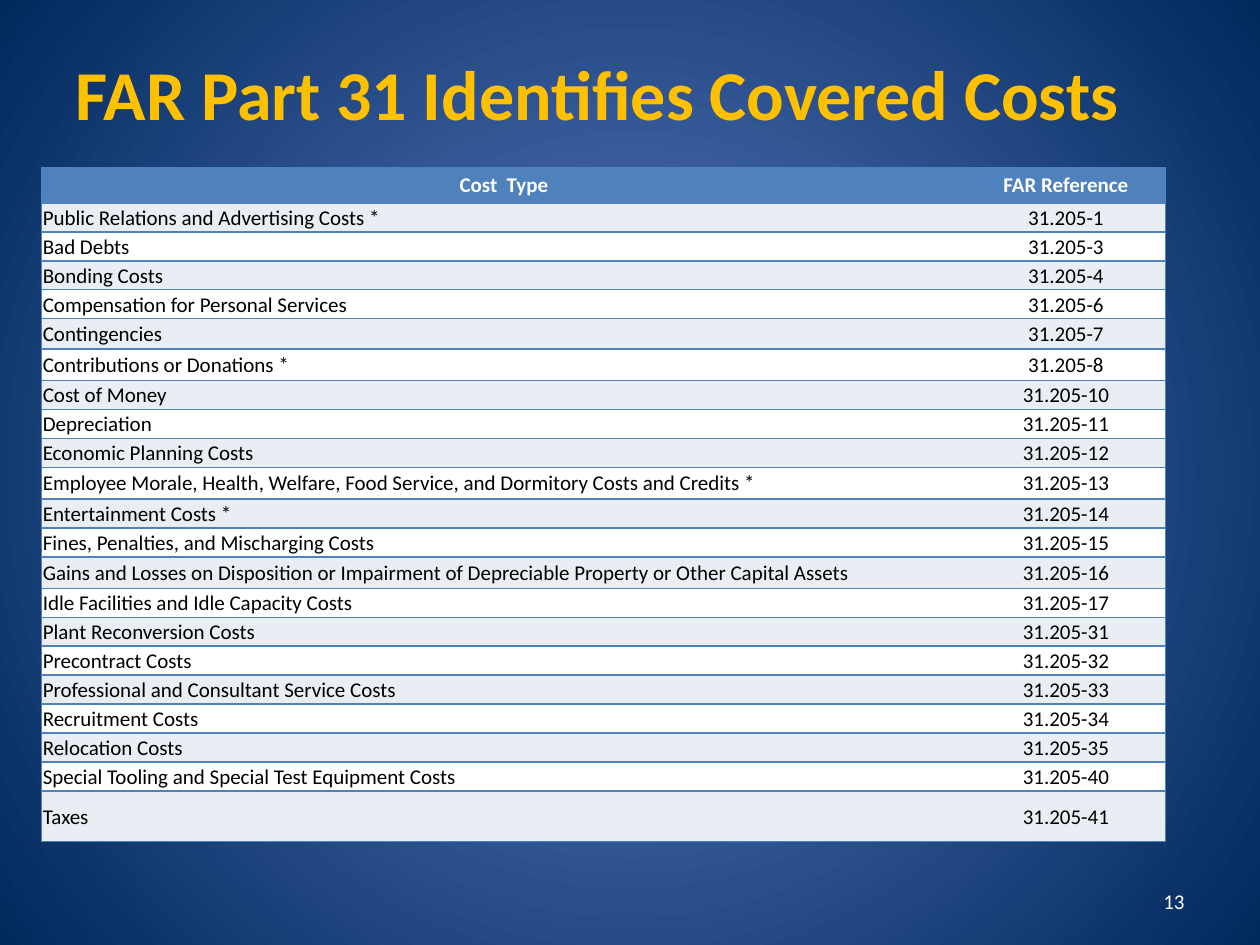
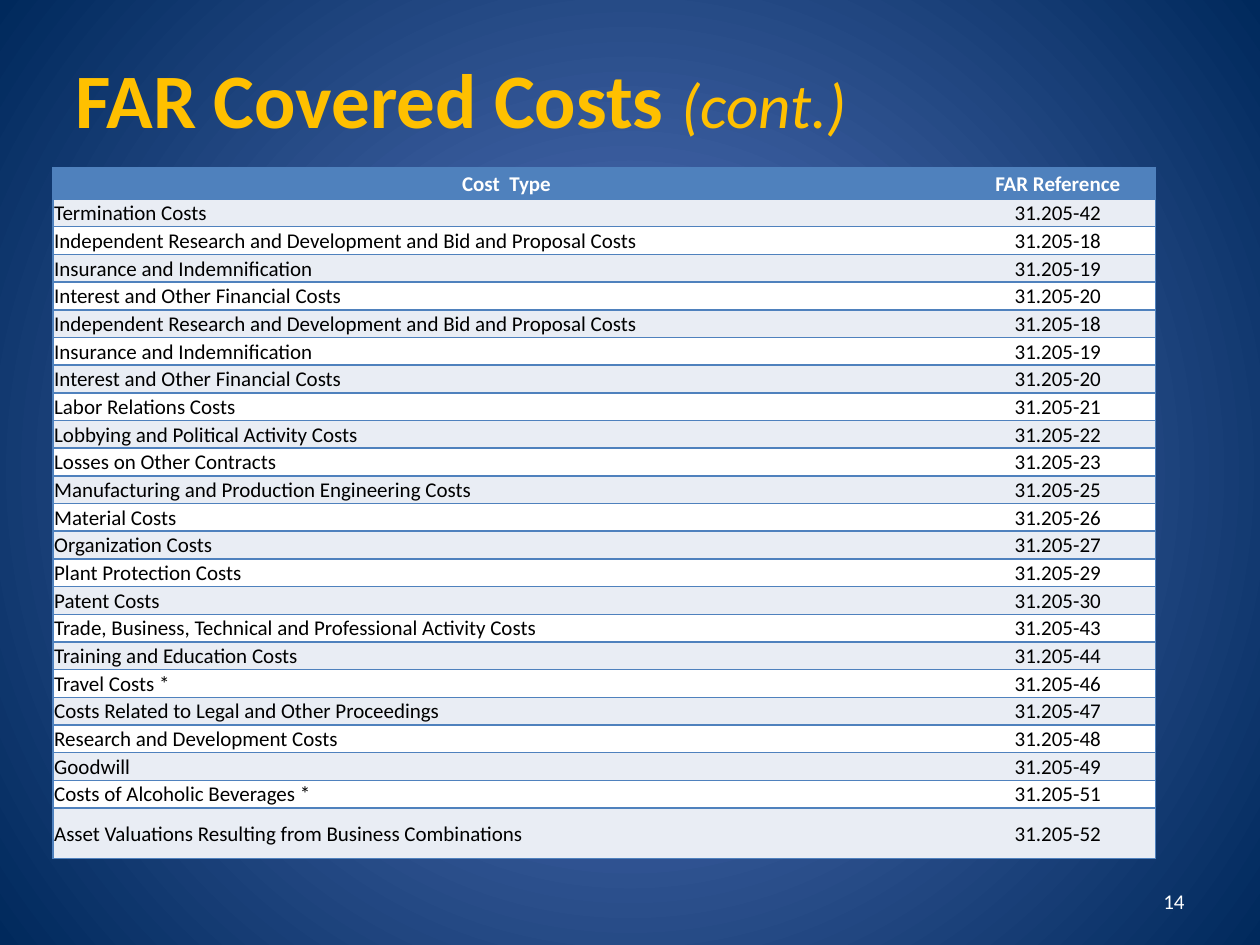
from lxml import etree
from pptx import Presentation
from pptx.dml.color import RGBColor
from pptx.enum.text import MSO_ANCHOR, MSO_AUTO_SIZE, PP_ALIGN
from pptx.oxml import parse_xml
from pptx.oxml.ns import nsdecls, qn
from pptx.util import Inches, Pt

MIDDLE = MSO_ANCHOR.MIDDLE
NO_AUTOFIT = MSO_AUTO_SIZE.NONE
LEFT, CENTER, RIGHT = PP_ALIGN.LEFT, PP_ALIGN.CENTER, PP_ALIGN.RIGHT

FONT = "Calibri"
COLORS = {
    "glow": "5E7CC5",
    "navy": "00295C",
    "gold": "FFC000",
    "white": "FFFFFF",
    "black": "000000",
    "header": "4F81BD",
    "band": "E9EDF4",
}
TITLE_ONLY = 5
PLAIN_TABLE_STYLE = "{2D5ABB26-0587-4C30-8999-92F81FD0307C}"
PAGE_NUMBER_BOX = (7.17, 6.95, 2.33, 0.4)
HEADINGS = ("Cost  Type", "FAR Reference")

COVERED_COSTS = [
    ("Public Relations and Advertising Costs *", 1),
    ("Bad Debts", 3),
    ("Bonding Costs", 4),
    ("Compensation for Personal Services", 6),
    ("Contingencies", 7),
    ("Contributions or Donations *", 8),
    ("Cost of Money", 10),
    ("Depreciation", 11),
    ("Economic Planning Costs", 12),
    ("Employee Morale, Health, Welfare, Food Service, and Dormitory Costs and Credits *", 13),
    ("Entertainment Costs *", 14),
    ("Fines, Penalties, and Mischarging Costs", 15),
    ("Gains and Losses on Disposition or Impairment of Depreciable Property or Other Capital Assets", 16),
    ("Idle Facilities and Idle Capacity Costs", 17),
    ("Plant Reconversion Costs", 31),
    ("Precontract Costs", 32),
    ("Professional and Consultant Service Costs", 33),
    ("Recruitment Costs", 34),
    ("Relocation Costs", 35),
    ("Special Tooling and Special Test Equipment Costs", 40),
    ("Taxes", 41),
]
RESEARCH_AND_FINANCE = [
    ("Independent Research and Development and Bid and Proposal Costs", 18),
    ("Insurance and Indemnification", 19),
    ("Interest and Other Financial Costs", 20),
]
MORE_COVERED_COSTS = [
    ("Termination Costs", 42),
    *RESEARCH_AND_FINANCE,
    *RESEARCH_AND_FINANCE,
    ("Labor Relations Costs", 21),
    ("Lobbying and Political Activity Costs", 22),
    ("Losses on Other Contracts", 23),
    ("Manufacturing and Production Engineering Costs", 25),
    ("Material Costs", 26),
    ("Organization Costs", 27),
    ("Plant Protection Costs", 29),
    ("Patent Costs", 30),
    ("Trade, Business, Technical and Professional Activity Costs", 43),
    ("Training and Education Costs", 44),
    ("Travel Costs *", 46),
    ("Costs Related to Legal and Other Proceedings", 47),
    ("Research and Development Costs", 48),
    ("Goodwill", 49),
    ("Costs of Alcoholic Beverages *", 51),
    ("Asset Valuations Resulting from Business Combinations", 52),
]


def rgb(name):
    return RGBColor.from_string(COLORS[name])


def add_run(paragraph, text, size, color, bold=False, italic=False):
    run = paragraph.add_run()
    run.text = text
    font = run.font
    font.name, font.size = FONT, Pt(size)
    font.bold, font.italic = bold, italic
    font.color.rgb = rgb(color)


def paint_background(master):
    fill = master.background.fill
    fill.gradient()
    for stop, color in zip(fill.gradient_stops, ("glow", "navy")):
        stop.color.rgb = rgb(color)
    linear = master.element.xpath("p:cSld/p:bg//a:lin")[0]
    radial = parse_xml(
        f'<a:path {nsdecls("a")} path="circle">'
        '<a:fillToRect l="50000" t="50000" r="50000" b="50000"/></a:path>'
    )
    linear.getparent().replace(linear, radial)


def fill_title(slide, height, parts):
    title = slide.shapes.title
    title.left, title.top = Inches(0.5), Inches(0.3)
    title.width, title.height = Inches(9), Inches(height)
    frame = title.text_frame
    frame.auto_size = NO_AUTOFIT
    frame.vertical_anchor = MIDDLE
    paragraph = frame.paragraphs[0]
    paragraph.alignment = LEFT
    for text, size, bold, italic in parts:
        add_run(paragraph, text, size, "gold", bold, italic)


def add_page_number(slide, number):
    frame = slide.shapes.add_textbox(*map(Inches, PAGE_NUMBER_BOX)).text_frame
    frame.word_wrap = True
    frame.vertical_anchor = MIDDLE
    frame.paragraphs[0].alignment = RIGHT
    add_run(frame.paragraphs[0], str(number), 12, "white")


def draw_borders(cell, sides):
    properties = cell._tc.get_or_add_tcPr()
    for side in sides:
        line = etree.SubElement(properties, qn(f"a:ln{side}"), w=str(Pt(1)))
        solid = etree.SubElement(line, qn("a:solidFill"))
        etree.SubElement(solid, qn("a:srgbClr"), val=COLORS["header"])


def format_cell(cell, text, column, row):
    heading = row == 0
    draw_borders(cell, ("R" if column else "L", "T", "B"))
    cell.fill.solid()
    cell.fill.fore_color.rgb = rgb("header" if heading else "band" if row % 2 else "white")
    cell.margin_left = cell.margin_right = cell.margin_top = Inches(0.01)
    cell.margin_bottom = 0
    cell.vertical_anchor = MIDDLE
    paragraph = cell.text_frame.paragraphs[0]
    paragraph.alignment = CENTER if heading or column else LEFT
    add_run(paragraph, text, 12, "white" if heading else "black", heading)


def add_cost_table(slide, box, reference_width, costs, row_heights):
    left, top, width, height = map(Inches, box)
    rows = [HEADINGS] + [(cost, f"31.205-{clause}") for cost, clause in costs]
    table = slide.shapes.add_table(len(rows), 2, left, top, width, height).table
    table._tbl.tblPr.find(qn("a:tableStyleId")).text = PLAIN_TABLE_STYLE
    table.columns[0].width = width - Inches(reference_width)
    table.columns[1].width = Inches(reference_width)
    for row, (texts, row_height) in enumerate(zip(rows, row_heights)):
        table.rows[row].height = Inches(row_height)
        for column, text in enumerate(texts):
            format_cell(table.cell(row, column), text, column, row)


def cost_row_heights(costs, heading, regular, taller=None):
    heights = [heading] + [regular] * (len(costs) - 1) + [0.4]
    for row, height in (taller or {}).items():
        heights[row] = height
    return heights


def add_cost_slide(prs, number, title_height, title_parts, box, reference_width, costs, row_heights):
    slide = prs.slides.add_slide(prs.slide_layouts[TITLE_ONLY])
    fill_title(slide, title_height, title_parts)
    add_page_number(slide, number)
    add_cost_table(slide, box, reference_width, costs, row_heights)


def main():
    prs = Presentation()
    prs.slide_width, prs.slide_height = Inches(10), Inches(7.5)
    paint_background(prs.slide_master)
    add_cost_slide(
        prs, 13, 0.87,
        [("FAR Part 31 Identifies Covered Costs", 40, True, False)],
        (0.33, 1.33, 8.92, 5.33), 1.58, COVERED_COSTS,
        cost_row_heights(COVERED_COSTS, 0.28, 0.23, {5: 0.24, 6: 0.25, 10: 0.25, 13: 0.25}),
    )
    add_cost_slide(
        prs, 14, 0.95,
        [("FAR Covered Costs ", 44, True, False), ("(cont.)", 36, False, True)],
        (0.42, 1.33, 8.75, 5.5), 1.55, MORE_COVERED_COSTS,
        cost_row_heights(MORE_COVERED_COSTS, 0.25, 0.22),
    )
    prs.save("out.pptx")


if __name__ == "__main__":
    main()
